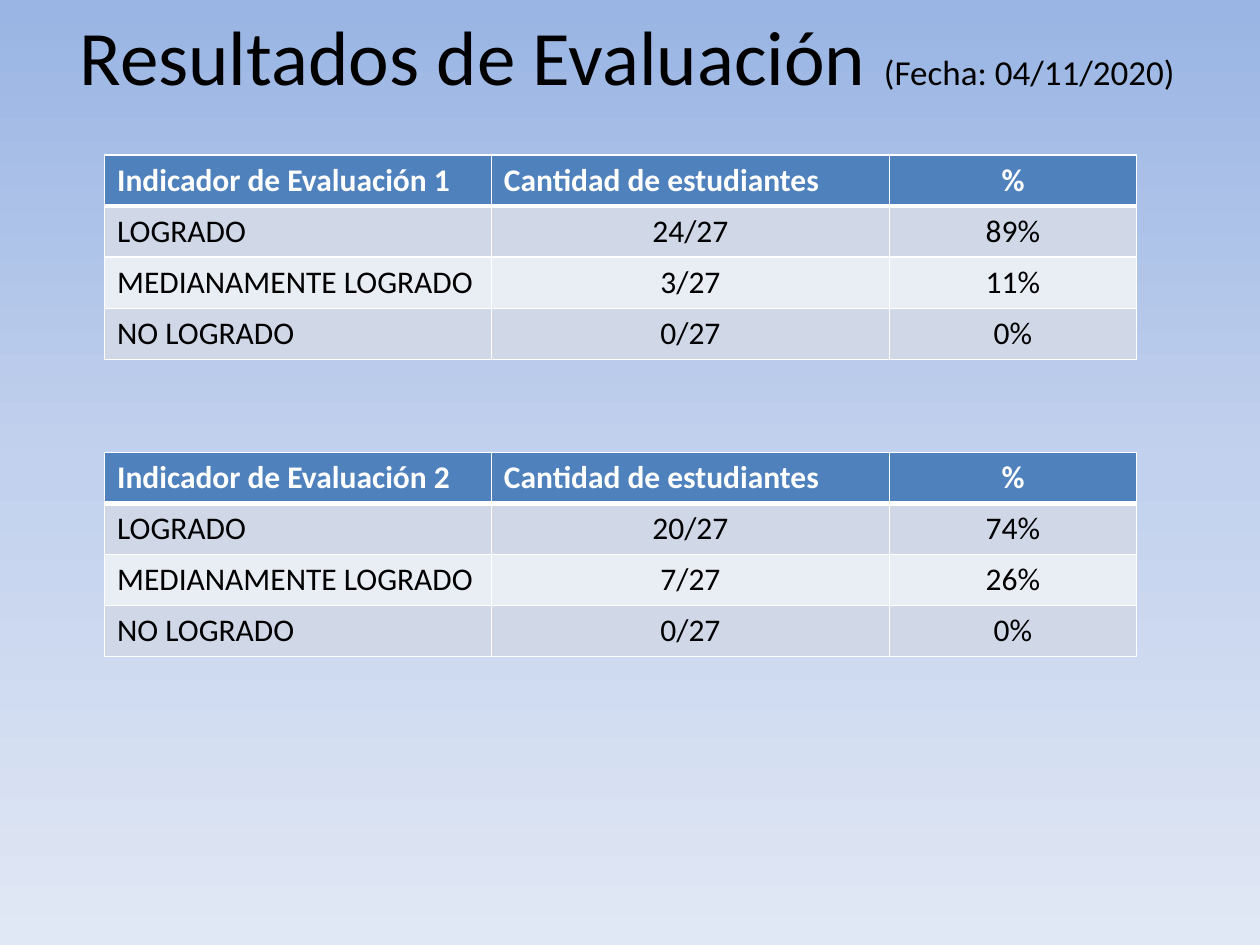
from dataclasses import dataclass

import pptx
import pptx.dml.color
import pptx.enum.text
import pptx.oxml
import pptx.oxml.ns
import pptx.util

Inches, Pt = pptx.util.Inches, pptx.util.Pt
RGB = pptx.dml.color.RGBColor.from_string
ALIGN = pptx.enum.text.PP_ALIGN
NAMESPACE = pptx.oxml.ns.nsdecls("a")

STUDENTS = 27
TITLE, DATE = "Resultados de Evaluación ", "(Fecha: 04/11/2020) "
LEVELS = ["LOGRADO", "MEDIANAMENTE LOGRADO", "NO LOGRADO"]
INDICATORS = [
    ("Indicador de Evaluación 1", [24, 3, 0]),
    ("Indicador de Evaluación 2", [20, 7, 0]),
]

SLIDE_W, SLIDE_H = 10, 7.5
TITLE_BOX = (0.51, 0, 9, 0.87)
TABLE_LEFT, TABLE_TOP, TABLE_PITCH = 0.83, 1.23, 2.36
COLUMNS = [3.07, 3.16, 1.96]
ROW_H = 0.405


@dataclass(frozen=True)
class Theme:
    font: str = "Calibri"
    title_size: int = 44
    date_size: int = 20
    table_size: int = 18
    text: str = "000000"
    light: str = "FFFFFF"
    header: str = "4F81BD"
    bands: tuple = ("D0D8E8", "E9EDF4")
    sky: tuple = ((0, "9AB5E4"), (50, "C2D1ED"), (100, "E1E8F5"))
    thin: int = 1
    thick: int = 3


THEME = Theme()


def add_run(paragraph, text, size, color, bold=False):
    run = paragraph.add_run()
    run.text = text
    run.font.name = THEME.font
    run.font.size = Pt(size)
    run.font.bold = bold
    run.font.color.rgb = RGB(color)


def paint_background(slide):
    """Vertical gradient; its three stops need XML."""
    fill = slide.background.fill
    fill.gradient()
    fill.gradient_angle = 270
    stops = slide.background._cSld.find(".//" + pptx.oxml.ns.qn("a:gsLst"))
    for stop in list(stops):
        stops.remove(stop)
    for percent, color in THEME.sky:
        stops.append(pptx.oxml.parse_xml(
            f'<a:gs {NAMESPACE} pos="{percent * 1000}"><a:srgbClr val="{color}"/></a:gs>'))


def set_borders(cell, top, bottom):
    """Border lines go ahead of the fill in the cell properties."""
    properties = cell._tc.get_or_add_tcPr()
    sides = {"L": THEME.thin, "R": THEME.thin, "T": top, "B": bottom}
    for position, (side, width) in enumerate(sides.items()):
        properties.insert(position, pptx.oxml.parse_xml(
            f'<a:ln{side} {NAMESPACE} w="{Pt(width)}"><a:solidFill>'
            f'<a:srgbClr val="{THEME.light}"/></a:solidFill></a:ln{side}>'))


def add_results(slide, top, indicator, counts):
    rows = [(indicator, "Cantidad de estudiantes", "%")]
    rows += [(level, f"{count}/{STUDENTS}", f"{count / STUDENTS:.0%}")
             for level, count in zip(LEVELS, counts)]
    table = slide.shapes.add_table(
        len(rows), len(COLUMNS), Inches(TABLE_LEFT), Inches(top),
        Inches(sum(COLUMNS)), Inches(ROW_H * len(rows))).table
    for column, width in zip(table.columns, COLUMNS):
        column.width = Inches(width)
    for r, row in enumerate(rows):
        table.rows[r].height = Inches(ROW_H)
        is_header = r == 0
        for c, text in enumerate(row):
            cell = table.cell(r, c)
            cell.fill.solid()
            cell.fill.fore_color.rgb = RGB(THEME.header if is_header else THEME.bands[(r - 1) % 2])
            set_borders(cell, THEME.thick if r == 1 else THEME.thin,
                        THEME.thick if is_header else THEME.thin)
            paragraph = cell.text_frame.paragraphs[0]
            centred = c == 2 or (c == 1 and not is_header)
            paragraph.alignment = ALIGN.CENTER if centred else ALIGN.LEFT
            add_run(paragraph, text, THEME.table_size,
                    THEME.light if is_header else THEME.text, is_header)


def main():
    deck = pptx.Presentation()
    deck.slide_width, deck.slide_height = Inches(SLIDE_W), Inches(SLIDE_H)
    slide = deck.slides.add_slide(deck.slide_layouts[5])
    paint_background(slide)

    title = slide.shapes.title
    title.left, title.top, title.width, title.height = map(Inches, TITLE_BOX)
    title.text_frame.auto_size = pptx.enum.text.MSO_AUTO_SIZE.NONE
    title.text_frame.vertical_anchor = pptx.enum.text.MSO_ANCHOR.MIDDLE
    heading = title.text_frame.paragraphs[0]
    heading.alignment = ALIGN.CENTER
    add_run(heading, TITLE, THEME.title_size, THEME.text)
    add_run(heading, DATE, THEME.date_size, THEME.text)

    for i, (indicator, counts) in enumerate(INDICATORS):
        add_results(slide, TABLE_TOP + i * TABLE_PITCH, indicator, counts)
    deck.save("out.pptx")


if __name__ == "__main__":
    main()
